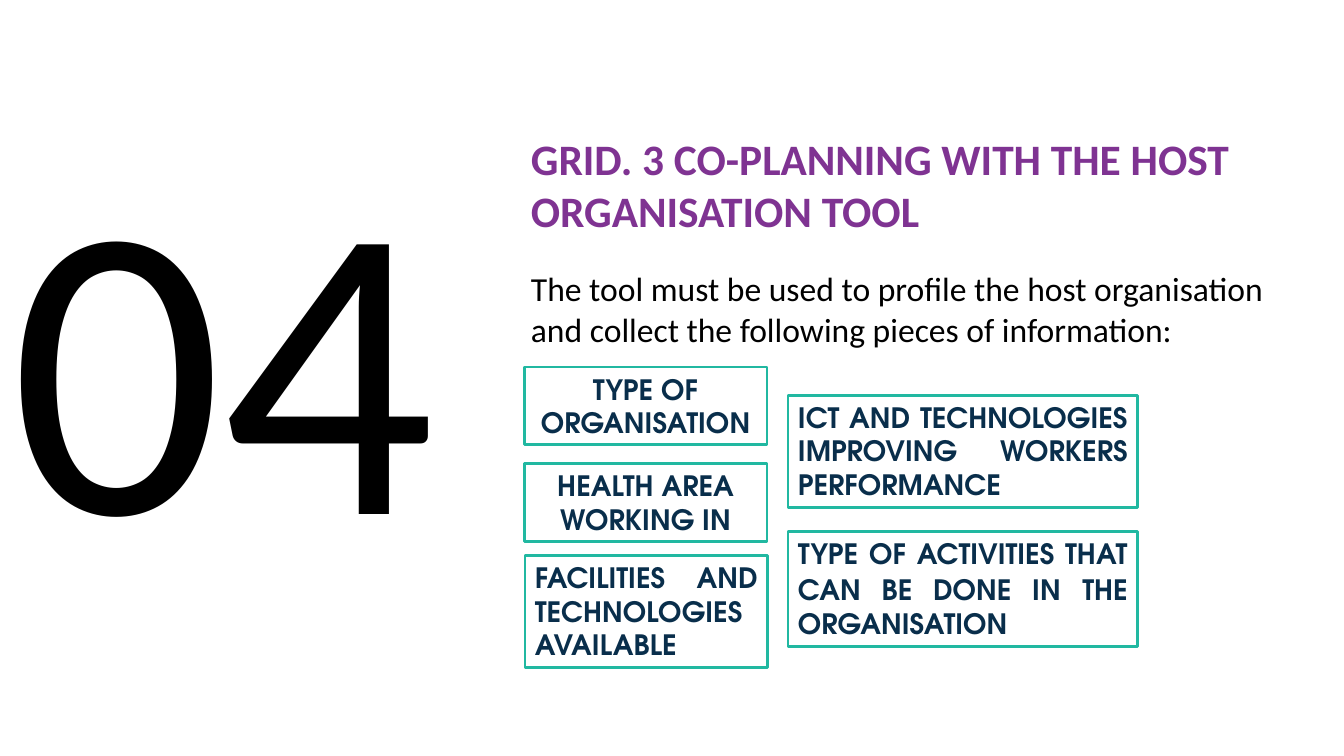
from pptx import Presentation
from pptx import util as u
from pptx.dml import color
from pptx.enum import shapes, text

COLOURS = {"black": "000000", "purple": "7F3392", "teal": "21B8A1", "navy": "092E4B"}
BODY_FONT = "Calibri"
LABEL_FONT = "TeX Gyre Adventor"
CENTRE = text.PP_ALIGN.CENTER
JUSTIFY = text.PP_ALIGN.JUSTIFY

NARROW, WIDE = 6.12, 8.81
TOPICS = [
    ((13.21, 9.25, NARROW, 1.96), CENTRE, [("TYPE OF ORGANISATION", 20)]),
    ((13.21, 11.68, NARROW, 1.96), CENTRE, [("HEALTH AREA WORKING IN", 20)]),
    ((19.86, 9.96, WIDE, 2.82), JUSTIFY,
     [("ICT AND TECHNOLOGIES IMPROVING WORKERS PERFORMANCE", 20)]),
    ((13.23, 14, NARROW, 2.82), JUSTIFY,
     [("FACILITIES AND TECHNOLOGIES AVAILABLE", 20)]),
    ((19.86, 13.39, WIDE, 2.9), JUSTIFY,
     [("TYPE OF ACTIVITIES THAT CAN BE DONE IN", 20), (" ", 22),
      ("THE ORGANISATION", 20)]),
]


def rgb(name):
    return color.RGBColor.from_string(COLOURS[name])


def lengths(box):
    return [u.Cm(value) for value in box]


def format_run(run, font, size, colour, bold=False):
    run.font.name = font
    run.font.size = u.Pt(size)
    run.font.bold = bold
    run.font.color.rgb = rgb(colour)


def place_section_number(slide, box, number):
    title = slide.shapes.title
    title.left, title.top, title.width, title.height = lengths(box)
    frame = title.text_frame
    frame.text = number
    frame.word_wrap = True
    frame.auto_size = text.MSO_AUTO_SIZE.NONE
    frame.vertical_anchor = text.MSO_ANCHOR.MIDDLE
    paragraph = frame.paragraphs[0]
    paragraph.alignment = text.PP_ALIGN.LEFT
    paragraph.line_spacing = 0.9
    format_run(paragraph.runs[0], BODY_FONT, 300, "black")


def add_introduction(slide, box, heading, explanation):
    frame = slide.shapes.add_textbox(*lengths(box)).text_frame
    frame.word_wrap = True
    frame.auto_size = text.MSO_AUTO_SIZE.SHAPE_TO_FIT_TEXT
    frame.text = f"{heading}\n{explanation}"
    heading_line, explanation_line = frame.paragraphs
    heading_line.space_after = u.Pt(23)
    format_run(heading_line.runs[0], BODY_FONT, 31, "purple", bold=True)
    format_run(explanation_line.runs[0], BODY_FONT, 24, "black")


def add_topic(slide, box, alignment, pieces):
    topic = slide.shapes.add_shape(shapes.MSO_SHAPE.RECTANGLE, *lengths(box))
    topic.shadow.inherit = False
    topic.fill.background()
    topic.line.color.rgb = rgb("teal")
    topic.line.width = u.Pt(2)
    frame = topic.text_frame
    frame.word_wrap = True
    frame.auto_size = text.MSO_AUTO_SIZE.SHAPE_TO_FIT_TEXT
    frame.vertical_anchor = text.MSO_ANCHOR.TOP
    paragraph = frame.paragraphs[0]
    paragraph.alignment = alignment
    for wording, size in pieces:
        run = paragraph.add_run()
        run.text = wording
        format_run(run, LABEL_FONT, size, "navy", bold=True)


def main():
    deck = Presentation()
    deck.slide_width, deck.slide_height = u.Cm(33.87), u.Cm(19.05)
    slide = deck.slides.add_slide(deck.slide_layouts[5])
    place_section_number(slide, (0, 0, 12.8, 19.05), "04")
    add_introduction(
        slide, (13.13, 3.2, 19.66, 5.77),
        "GRID. 3 CO-PLANNING WITH THE HOST ORGANISATION TOOL",
        "The tool must be used to profile the host organisation "
        "and collect the following pieces of information:")
    for box, alignment, pieces in TOPICS:
        add_topic(slide, box, alignment, pieces)
    deck.save("out.pptx")


if __name__ == "__main__":
    main()
